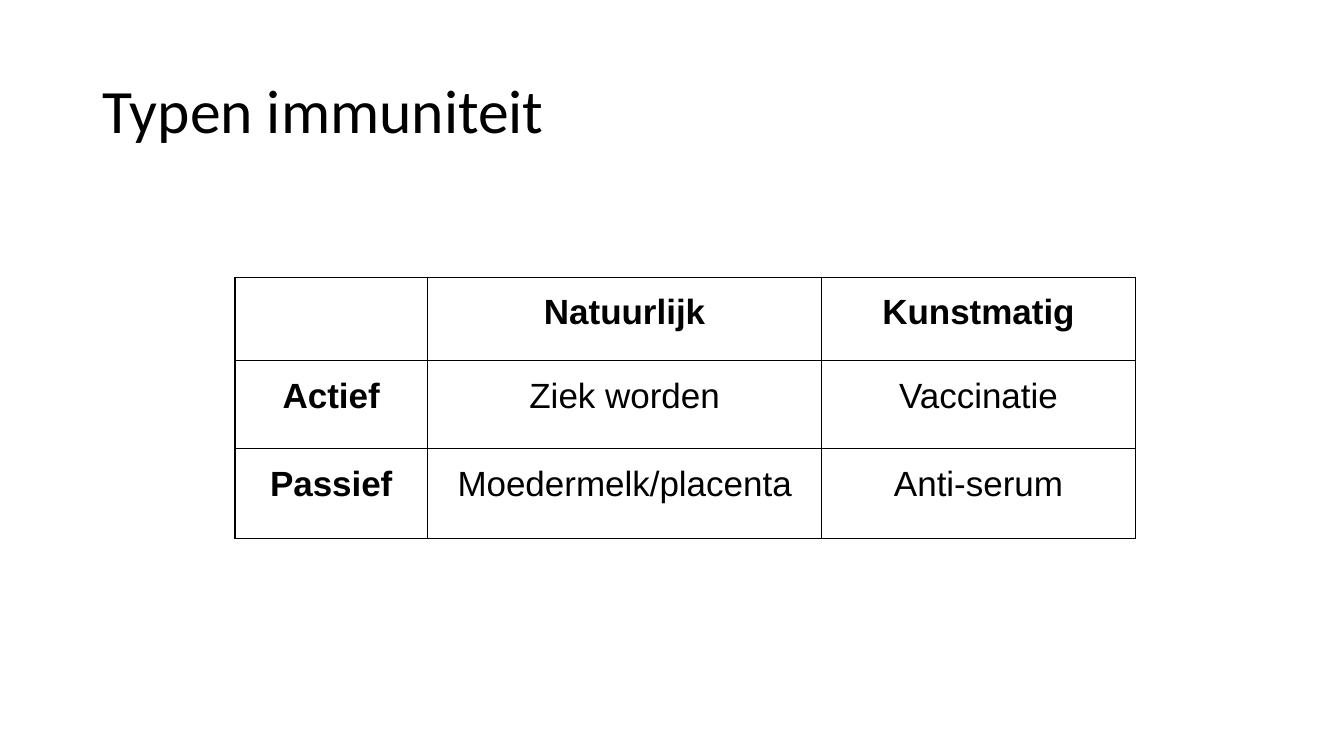
import pptx
import pptx.util
import pptx.dml.color
import pptx.enum.text
import pptx.oxml
import pptx.oxml.ns
from lxml import etree

Inches, Pt = pptx.util.Inches, pptx.util.Pt
RGB = pptx.dml.color.RGBColor.from_string
ALIGN = pptx.enum.text.PP_ALIGN
ANCHOR = pptx.enum.text.MSO_ANCHOR

# Content
TITLE = "Typen immuniteit"
ROWS = [
    ["", "Natuurlijk", "Kunstmatig"],
    ["Actief", "Ziek worden", "Vaccinatie"],
    ["Passief", "Moedermelk/placenta", "Anti-serum"],
]
WIDTHS = [1.91, 3.91, 3.11]
HEIGHTS = [0.83, 0.87, 0.89]

THEME = {
    "ink": "000000", "line": 1,
    "head": "Calibri", "body": "Arial",
    "big": 44, "mid": 25,
}


def write(frame, text, font, size, bold=False, align=ALIGN.LEFT, gap=1.0):
    para = frame.paragraphs[0]
    para.alignment, para.line_spacing = align, gap
    run = para.add_run()
    run.text = text
    run.font.name, run.font.size, run.font.bold = font, Pt(size), bold
    run.font.color.rgb = RGB(THEME["ink"])


def border(cell):
    props = cell._tc.get_or_add_tcPr()
    qn = pptx.oxml.ns.qn
    for spot, side in enumerate(("a:lnL", "a:lnR", "a:lnT", "a:lnB")):
        line = etree.Element(qn(side), w=str(Pt(THEME["line"])))
        fill = etree.SubElement(line, qn("a:solidFill"))
        etree.SubElement(fill, qn("a:srgbClr"), val=THEME["ink"])
        props.insert(spot, line)


def main():
    deck = pptx.Presentation()
    deck.slide_width, deck.slide_height = Inches(13.33), Inches(7.5)
    slide = deck.slides.add_slide(deck.slide_layouts[6])

    # Title
    box = slide.shapes.add_textbox(
        Inches(0.92), Inches(0.4), Inches(11.5), Inches(1.45))
    frame = box.text_frame
    frame.word_wrap = True
    frame.vertical_anchor = ANCHOR.MIDDLE
    write(frame, TITLE, THEME["head"], THEME["big"], gap=0.9)

    # Table
    table = slide.shapes.add_table(
        len(ROWS), len(WIDTHS), Inches(2.33), Inches(2.75),
        Inches(sum(WIDTHS)), Inches(sum(HEIGHTS))).table
    table.first_row = table.horz_banding = False
    for col, width in zip(table.columns, WIDTHS):
        col.width = Inches(width)
    for row, height in zip(table.rows, HEIGHTS):
        row.height = Inches(height)

    # Cells: first row and first column are bold
    for r, row in enumerate(ROWS):
        for c, text in enumerate(row):
            cell = table.cell(r, c)
            cell.fill.background()
            cell.margin_left = cell.margin_right = Inches(0.07)
            cell.margin_top = cell.margin_bottom = Inches(0.1)
            border(cell)
            if text:
                write(cell.text_frame, text, THEME["body"], THEME["mid"],
                      bold=r == 0 or c == 0, align=ALIGN.CENTER, gap=1.15)

    deck.save("out.pptx")


if __name__ == "__main__":
    main()
